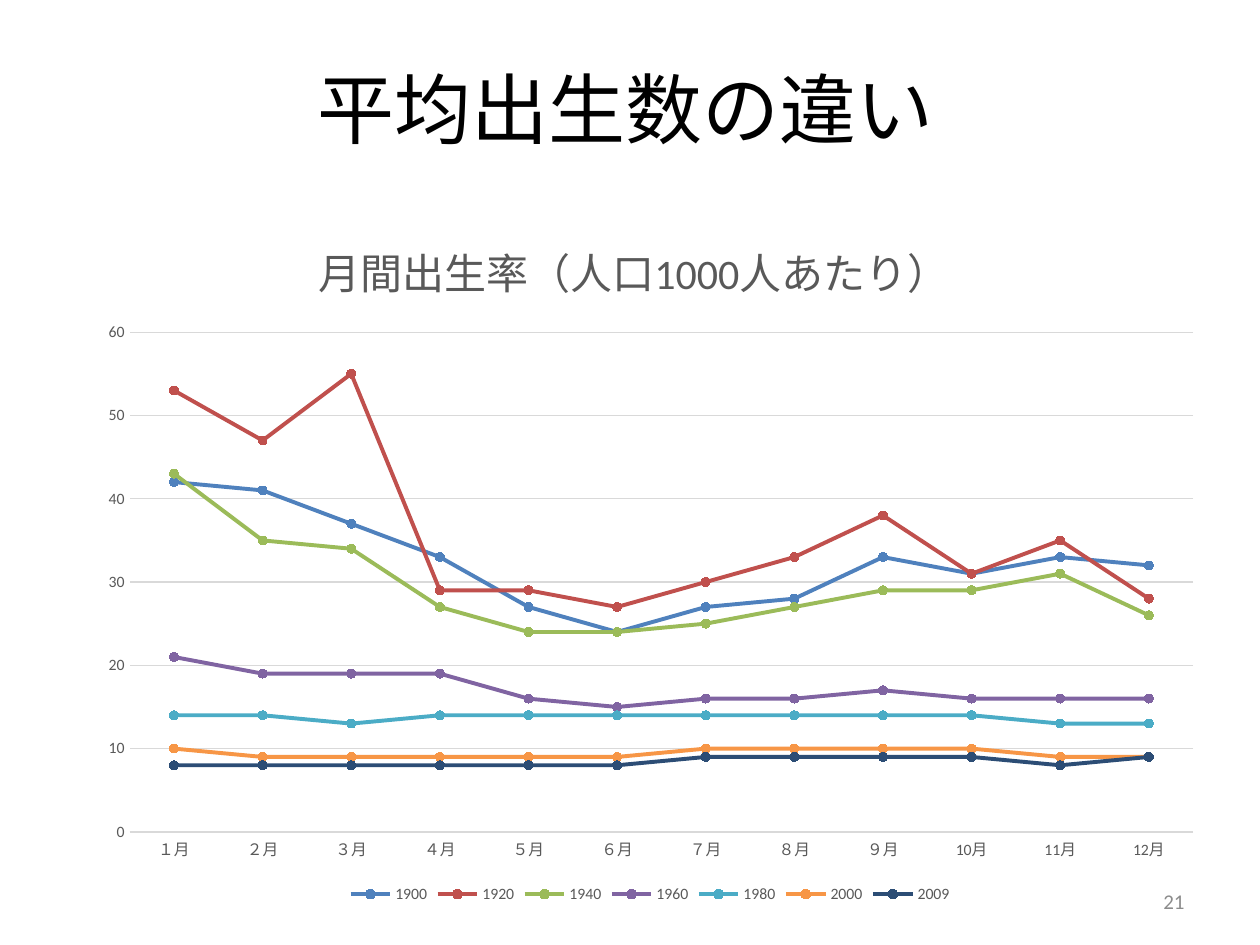
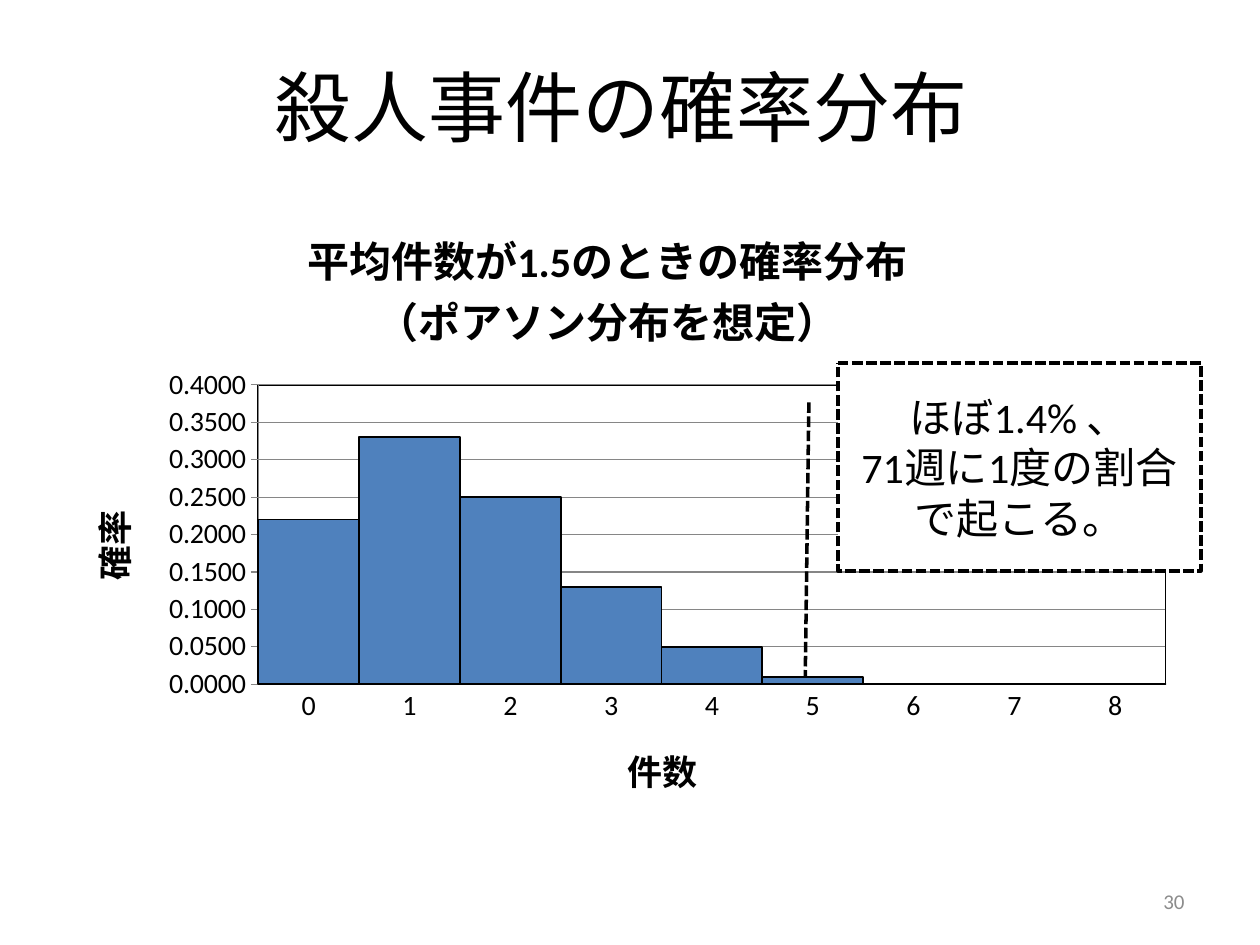
from math import exp, factorial

from lxml import etree
from pptx import Presentation
from pptx.chart.data import CategoryChartData
from pptx.dml.color import RGBColor
from pptx.enum.chart import XL_CHART_TYPE as Kind
from pptx.enum.chart import XL_LEGEND_POSITION as Legend
from pptx.enum.chart import XL_MARKER_STYLE as Marker
from pptx.enum.chart import XL_TICK_MARK as Tick
from pptx.enum.dml import MSO_LINE as Dash
from pptx.enum.shapes import MSO_SHAPE as Shape
from pptx.enum.text import MSO_ANCHOR as Anchor
from pptx.enum.text import PP_ALIGN as Align
from pptx.oxml import parse_xml
from pptx.oxml.ns import nsdecls, qn
from pptx.util import Inches, Pt

FONT = "Calibri"
COLORS = {
    "ink": "000000", "paper": "FFFFFF", "gray": "595959", "rule": "D9D9D9",
    "axis": "868686", "page": "8C8C8C", "blue": "4F81BD", "red": "C0504D",
    "green": "9BBB59", "purple": "8064A2", "teal": "4BACC6",
    "orange": "F79646", "navy": "2C4D75",
}

MONTHS = [f"{n}月" for n in "１２３４５６７８９"] + ["10月", "11月", "12月"]
BIRTHS = {
    "1900": ("blue", [42, 41, 37, 33, 27, 24, 27, 28, 33, 31, 33, 32]),
    "1920": ("red", [53, 47, 55, 29, 29, 27, 30, 33, 38, 31, 35, 28]),
    "1940": ("green", [43, 35, 34, 27, 24, 24, 25, 27, 29, 29, 31, 26]),
    "1960": ("purple", [21, 19, 19, 19, 16, 15, 16, 16, 17, 16, 16, 16]),
    "1980": ("teal", [14, 14, 13, 14, 14, 14, 14, 14, 14, 14, 13, 13]),
    "2000": ("orange", [10, 9, 9, 9, 9, 9, 10, 10, 10, 10, 9, 9]),
    "2009": ("navy", [8, 8, 8, 8, 8, 8, 9, 9, 9, 9, 8, 9]),
}
MEAN = 1.5
CASES = range(9)


def rgb(name):
    return RGBColor.from_string(COLORS[name])


def style(font, size, color="ink", bold=False):
    font.name, font.size, font.bold = FONT, Pt(size), bold
    font.color.rgb = rgb(color)


def stroke(line, color, width):
    line.color.rgb = rgb(color)
    line.width = Pt(width)


def fill_text(frame, text, size, color="ink", bold=False, align=Align.CENTER):
    frame.text = text
    for para in frame.paragraphs:
        para.alignment = align
        for run in para.runs:
            style(run.font, size, color, bold)


def place(node, index, **parts):
    """Give a chart part a manual layout, in fractions of the chart."""
    for old in node.findall(qn("c:layout")):
        node.remove(old)
    layout = parse_xml(f"<c:layout {nsdecls('c')}/>")
    manual = etree.SubElement(layout, qn("c:manualLayout"))
    if "w" in parts:
        etree.SubElement(manual, qn("c:layoutTarget")).set("val", "inner")
    for mode in ("xMode", "yMode"):
        etree.SubElement(manual, qn(f"c:{mode}")).set("val", "edge")
    for key, value in parts.items():
        etree.SubElement(manual, qn(f"c:{key}")).set("val", str(value))
    node.insert(index, layout)


class Deck:
    def __init__(self):
        self.prs = Presentation()
        self.prs.slide_width, self.prs.slide_height = Inches(10), Inches(7.5)
        self.slide = None

    def text(self, box, text, size, color="ink", align=Align.CENTER):
        frame = self.slide.shapes.add_textbox(*map(Inches, box)).text_frame
        frame.word_wrap = True
        frame.vertical_anchor = Anchor.MIDDLE
        fill_text(frame, text, size, color, align=align)

    def page(self, title, left, top, number):
        self.slide = self.prs.slides.add_slide(self.prs.slide_layouts[6])
        self.text((left, top, 9, 1.25), title, 44)
        self.text((7.17, 6.95, 2.33, 0.4), str(number), 12, "page", Align.RIGHT)

    def chart(self, kind, box, cats, rows, plot):
        data = CategoryChartData()
        data.categories = cats
        for name, values in rows.items():
            data.add_series(name, values)
        frame = self.slide.shapes.add_chart(kind, *map(Inches, box), data)
        chart = frame.chart
        style(chart.font, 10)
        chart.has_legend = False
        chart.plots[0].vary_by_categories = False
        area = chart.element.find(f".//{qn('c:plotArea')}")
        place(area, 0, **plot)
        return chart, area

    def head(self, owner, text, size, x, y, color="ink", bold=True):
        """Title a chart or an axis."""
        owner.has_title = True
        title = owner.chart_title if hasattr(owner, "chart_title") else owner.axis_title
        fill_text(title.text_frame, text, size, color, bold)
        place(title._element, 1, x=x, y=y)

    def axes(self, chart, size, color, rule, tick, top, step, form):
        cat, val = chart.category_axis, chart.value_axis
        for axis in (cat, val):
            style(axis.tick_labels.font, size, color)
            axis.major_tick_mark = axis.minor_tick_mark = Tick.NONE
            stroke(axis.format.line, rule, 0.75)
        val.major_tick_mark = tick
        val.minimum_scale, val.maximum_scale, val.major_unit = 0, top, step
        val.has_major_gridlines = True
        stroke(val.major_gridlines.format.line, rule, 0.75)
        val.tick_labels.number_format = form
        val.tick_labels.number_format_is_linked = False
        return cat, val

    def callout(self, box, tail, text):
        note = self.slide.shapes.add_shape(Shape.LINE_CALLOUT_1, *map(Inches, box))
        note.shadow.inherit = False
        for i, value in enumerate(tail):
            note.adjustments[i] = value
        note.fill.solid()
        note.fill.fore_color.rgb = rgb("paper")
        stroke(note.line, "ink", 2)
        note.line.dash_style = Dash.SQUARE_DOT
        note.text_frame.word_wrap = True
        note.text_frame.vertical_anchor = Anchor.MIDDLE
        fill_text(note.text_frame, text, 24)


def births(deck):
    deck.page("平均出生数の違い", 0.47, 0.23, 21)
    rows = {year: values for year, (_, values) in BIRTHS.items()}
    chart, _ = deck.chart(Kind.LINE_MARKERS, (0.67, 1.7, 8.98, 5.51), MONTHS, rows,
                          dict(x=0.04, y=0.17, w=0.94, h=0.72))
    deck.head(chart, "月間出生率（人口1000人あたり）", 24, 0.2, 0.02, "gray", False)
    _, val = deck.axes(chart, 9, "gray", "rule", Tick.NONE, 60, 10, "0")
    val.format.line.fill.background()
    for line, (color, _) in zip(chart.plots[0].series, BIRTHS.values()):
        line.smooth = False
        stroke(line.format.line, color, 2.25)
        line.marker.style, line.marker.size = Marker.CIRCLE, 5
        dot = line.marker.format
        dot.fill.solid()
        dot.fill.fore_color.rgb = rgb(color)
        stroke(dot.line, color, 0.75)
    chart.has_legend = True
    chart.legend.position = Legend.BOTTOM
    chart.legend.include_in_layout = False
    style(chart.legend.font, 9, "gray")


def murders(deck):
    deck.page("殺人事件の確率分布", 0.43, 0.21, 30)
    odds = [round(exp(-MEAN) * MEAN ** n / factorial(n), 2) for n in CASES]
    chart, area = deck.chart(Kind.COLUMN_CLUSTERED, (0.43, 1.62, 9, 4.95),
                             [str(n) for n in CASES], {"確率": odds},
                             dict(x=0.18, y=0.29, w=0.8, h=0.48))
    deck.head(chart, "平均件数が1.5のときの確率分布\n（ポアソン分布を想定）", 24, 0.22, 0.03)
    cat, val = deck.axes(chart, 16, "ink", "axis", Tick.OUTSIDE, 0.4, 0.05, "0.0000")
    deck.head(cat, "件数", 20, 0.5, 0.85)
    deck.head(val, "確率", 20, 0.02, 0.48)
    area.append(parse_xml(
        f"<c:spPr {nsdecls('c', 'a')}><a:noFill/><a:ln w='{Pt(1)}'><a:solidFill>"
        f"<a:srgbClr val='{COLORS['ink']}'/></a:solidFill></a:ln></c:spPr>"))
    chart.plots[0].gap_width = 0
    bars = chart.plots[0].series[0].format
    bars.fill.solid()
    bars.fill.fore_color.rgb = rgb("blue")
    stroke(bars.line, "ink", 1)
    deck.callout((6.65, 2.88, 2.88, 1.65), (0.19, -0.08, 1.51, -0.09),
                 "ほぼ1.4% 、\n71週に1度の割合で起こる。")


def main():
    deck = Deck()
    births(deck)
    murders(deck)
    deck.prs.save("out.pptx")


if __name__ == "__main__":
    main()
